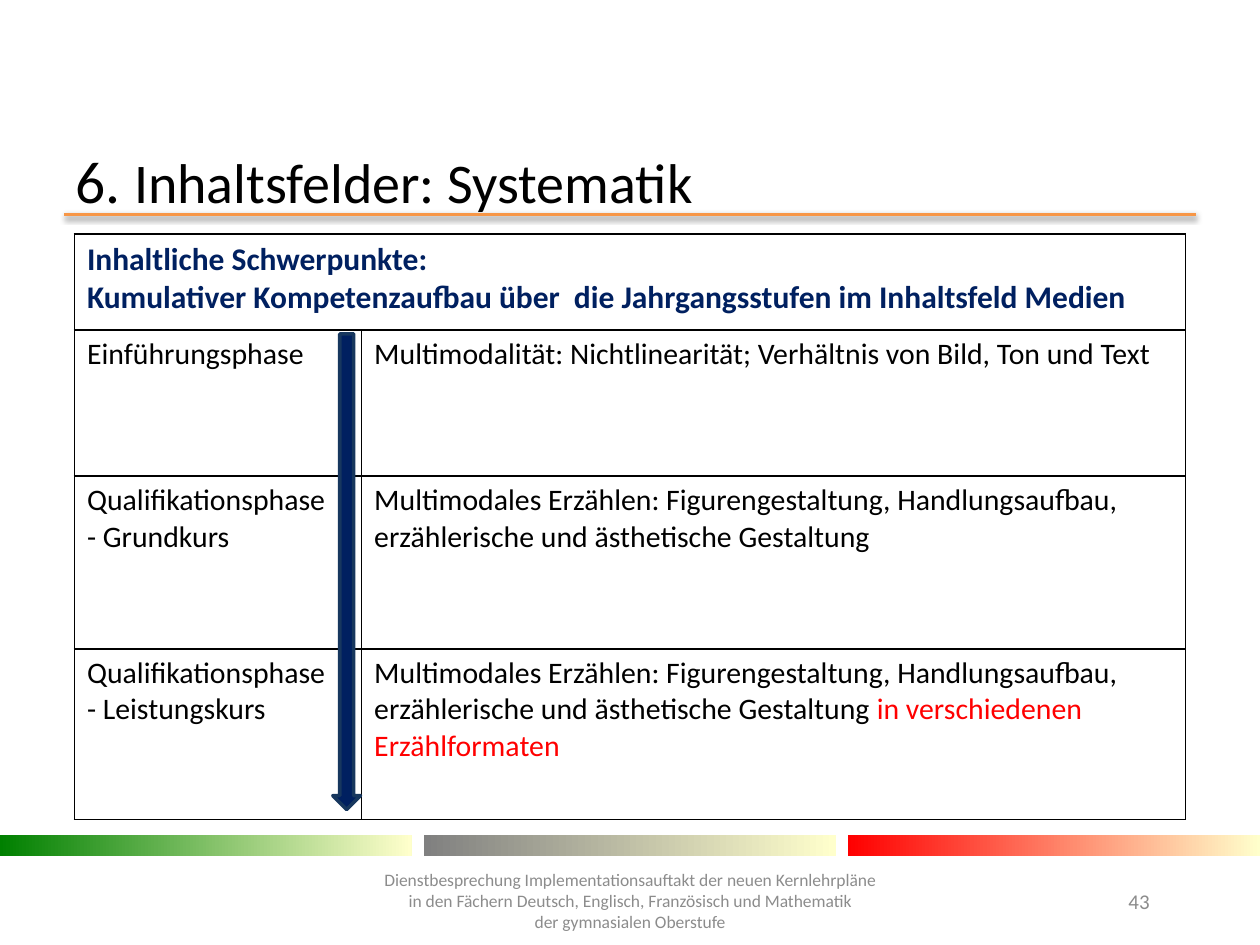
from dataclasses import dataclass

from lxml import etree
from pptx import Presentation
from pptx.dml.color import RGBColor
from pptx.enum.shapes import MSO_CONNECTOR, MSO_SHAPE
from pptx.enum.text import MSO_ANCHOR, MSO_AUTO_SIZE, PP_ALIGN
from pptx.oxml import parse_xml
from pptx.oxml.ns import nsdecls, qn
from pptx.util import Cm, Pt

LEFT, CENTER = PP_ALIGN.LEFT, PP_ALIGN.CENTER
TOP, MIDDLE = MSO_ANCHOR.TOP, MSO_ANCHOR.MIDDLE
NO_AUTOFIT = MSO_AUTO_SIZE.NONE
STRAIGHT = MSO_CONNECTOR.STRAIGHT
RECTANGLE, DOWN_ARROW = MSO_SHAPE.RECTANGLE, MSO_SHAPE.DOWN_ARROW
TITLE_ONLY = 5


@dataclass(frozen=True)
class Theme:
    """Colours and type sizes of the slide."""
    font: str = "Calibri"
    ink: str = "000000"
    navy: str = "002060"
    navy_edge: str = "17375E"
    accent: str = "FF0000"
    rule: str = "F79646"
    muted: str = "8C8C8C"
    cream: str = "FFFFCC"
    bands: tuple = ("008000", "808080", "FF0000")
    number_size: int = 34
    title_size: int = 32
    heading_size: int = 18
    body_size: int = 17
    page_size: int = 12
    footer_size: int = 10


THEME = Theme()
HEADING = {"size": THEME.heading_size, "color": THEME.navy, "bold": True}
BODY = {"size": THEME.body_size, "color": THEME.ink, "bold": False}
ACCENT = BODY | {"color": THEME.accent}
FOOTER = {"size": THEME.footer_size, "color": THEME.muted}
PAGE = {"size": THEME.page_size, "color": THEME.muted}

NARRATION = ("Multimodales Erzählen: Figurengestaltung, Handlungsaufbau, "
             "erzählerische und ästhetische Gestaltung")
HEADLINES = ["Inhaltliche Schwerpunkte:",
             "Kumulativer Kompetenzaufbau über  die Jahrgangsstufen im Inhaltsfeld Medien"]
PHASES = [
    (["Einführungsphase"],
     [("Multimodalität: Nichtlinearität; Verhältnis von Bild, Ton und Text", BODY)]),
    (["Qualifikationsphase", "- Grundkurs"], [(NARRATION, BODY)]),
    (["Qualifikationsphase", "- Leistungskurs"],
     [(NARRATION + " ", BODY), ("in verschiedenen Erzählformaten", ACCENT)]),
]
EVENT = ["Dienstbesprechung Implementationsauftakt der neuen Kernlehrpläne",
         "in den Fächern Deutsch, Englisch, Französisch und Mathematik",
         "der gymnasialen Oberstufe"]


def style_lines(lines, style):
    """Turn plain lines into paragraphs of one styled run each."""
    return [[(line, style)] for line in lines]


def write(frame, paragraphs, align=LEFT, anchor=TOP):
    """Fill a text frame with paragraphs of (text, style) runs."""
    for name, value in {"word_wrap": True, "vertical_anchor": anchor}.items():
        setattr(frame, name, value)
    for index, runs in enumerate(paragraphs):
        paragraph = frame.paragraphs[0] if index == 0 else frame.add_paragraph()
        paragraph.alignment = align
        for text, style in runs:
            run = paragraph.add_run()
            run.text = text
            run.font.color.rgb = RGBColor.from_string(style["color"])
            font = {"name": THEME.font, "size": Pt(style["size"]),
                    "bold": style.get("bold", False)}
            for name, value in font.items():
                setattr(run.font, name, value)


def add_title(slide, left, top, width, height):
    """Place the title with the shadowed rule beneath it."""
    title = slide.shapes.title
    box = {"left": left, "top": top, "width": width, "height": height}
    for name, value in box.items():
        setattr(title, name, Cm(value))
    number = {"size": THEME.number_size, "color": THEME.ink}
    topic = number | {"size": THEME.title_size}
    write(title.text_frame, [[("6. ", number), ("Inhaltsfelder: Systematik", topic)]],
          anchor=MIDDLE)
    title.text_frame.auto_size = NO_AUTOFIT

    rule_y = Cm(top + height + 0.21)
    rule = slide.shapes.add_connector(STRAIGHT, Cm(left + 0.03), rule_y,
                                      Cm(left + width - 0.03), rule_y)
    rule.line.color.rgb = RGBColor.from_string(THEME.rule)
    rule.line.width = Pt(2)
    effects = etree.SubElement(rule.element.spPr, qn("a:effectLst"))
    effects.append(parse_xml(
        f'<a:outerShdw {nsdecls("a")} blurRad="{Pt(3.1)}" dist="{Pt(1.6)}" '
        f'dir="5400000" rotWithShape="0"><a:srgbClr val="{THEME.ink}">'
        '<a:alpha val="38000"/></a:srgbClr></a:outerShdw>'))


def draw_borders(cell):
    """Draw a thin line on all four sides of a cell without fill."""
    properties = cell._tc.get_or_add_tcPr()
    for side in ("lnL", "lnR", "lnT", "lnB"):
        properties.append(parse_xml(
            f'<a:{side} {nsdecls("a")} w="{Pt(1)}"><a:solidFill>'
            f'<a:srgbClr val="{THEME.ink}"/></a:solidFill></a:{side}>'))
    cell.fill.background()


def add_phase_table(slide, left, top, width, height):
    """Place the table of phases and the arrow running down through them."""
    row_heights = (1.93, 2.95, 3.48, height - 8.36)
    phase_width = 5.79
    table = slide.shapes.add_table(len(row_heights), 2, Cm(left), Cm(top),
                                   Cm(width), Cm(height)).table
    table.first_row = table.horz_banding = False
    for column, size in zip(table.columns, (phase_width, width - phase_width)):
        column.width = Cm(size)
    for row, size in zip(table.rows, row_heights):
        row.height = Cm(size)
    for cell in table.iter_cells():
        draw_borders(cell)
    table.cell(0, 0).merge(table.cell(0, 1))
    write(table.cell(0, 0).text_frame, style_lines(HEADLINES, HEADING))
    for row, (phase, content) in enumerate(PHASES, start=1):
        write(table.cell(row, 0).text_frame, style_lines(phase, BODY))
        write(table.cell(row, 1).text_frame, [content])

    arrow = slide.shapes.add_shape(DOWN_ARROW, Cm(left + 5.21), Cm(top + 2.01),
                                   Cm(0.56), Cm(height - 2.21))
    arrow.shadow.inherit = False
    arrow.fill.solid()
    arrow.fill.fore_color.rgb = RGBColor.from_string(THEME.navy)
    arrow.line.color.rgb = RGBColor.from_string(THEME.navy_edge)
    arrow.line.width = Pt(2)


def add_bands(slide, left, top, width, height):
    """Place equal bands that fade to cream across the given width."""
    band_width = 8.3
    step = (width - band_width) / (len(THEME.bands) - 1)
    for index, color in enumerate(THEME.bands):
        band = slide.shapes.add_shape(RECTANGLE, Cm(left + index * step), Cm(top),
                                      Cm(band_width), Cm(height))
        band.shadow.inherit = False
        band.line.fill.background()
        band.fill.gradient()
        band.fill.gradient_angle = 0
        for stop, shade, position in zip(band.fill.gradient_stops,
                                         (color, THEME.cream), (0, 1)):
            stop.color.rgb = RGBColor.from_string(shade)
            stop.position = position


def add_footer(slide, left, top, width, height):
    """Place the centred event name and the page number at the right."""
    event_width, page_width = 12.4, 1.63
    event = slide.shapes.add_textbox(Cm(left + (width - event_width) / 2), Cm(top),
                                     Cm(event_width), Cm(height))
    write(event.text_frame, style_lines(EVENT, FOOTER), CENTER, MIDDLE)
    page = slide.shapes.add_textbox(Cm(left + width - page_width), Cm(top + 0.33),
                                    Cm(page_width), Cm(1.02))
    write(page.text_frame, [[("43", PAGE)]])


def main():
    """Build and save the slide."""
    deck = Presentation()
    deck.slide_width, deck.slide_height = Cm(25.4), Cm(19.05)
    slide = deck.slides.add_slide(deck.slide_layouts[TITLE_ONLY])
    add_bands(slide, 0, 16.84, 25.4, 0.41)
    add_title(slide, 1.27, 3.12, 22.86, 0.99)
    add_phase_table(slide, 1.5, 4.72, 22.4, 11.8)
    add_footer(slide, 1.27, 17.45, 22.86, 1.42)
    deck.save("out.pptx")


if __name__ == "__main__":
    main()
